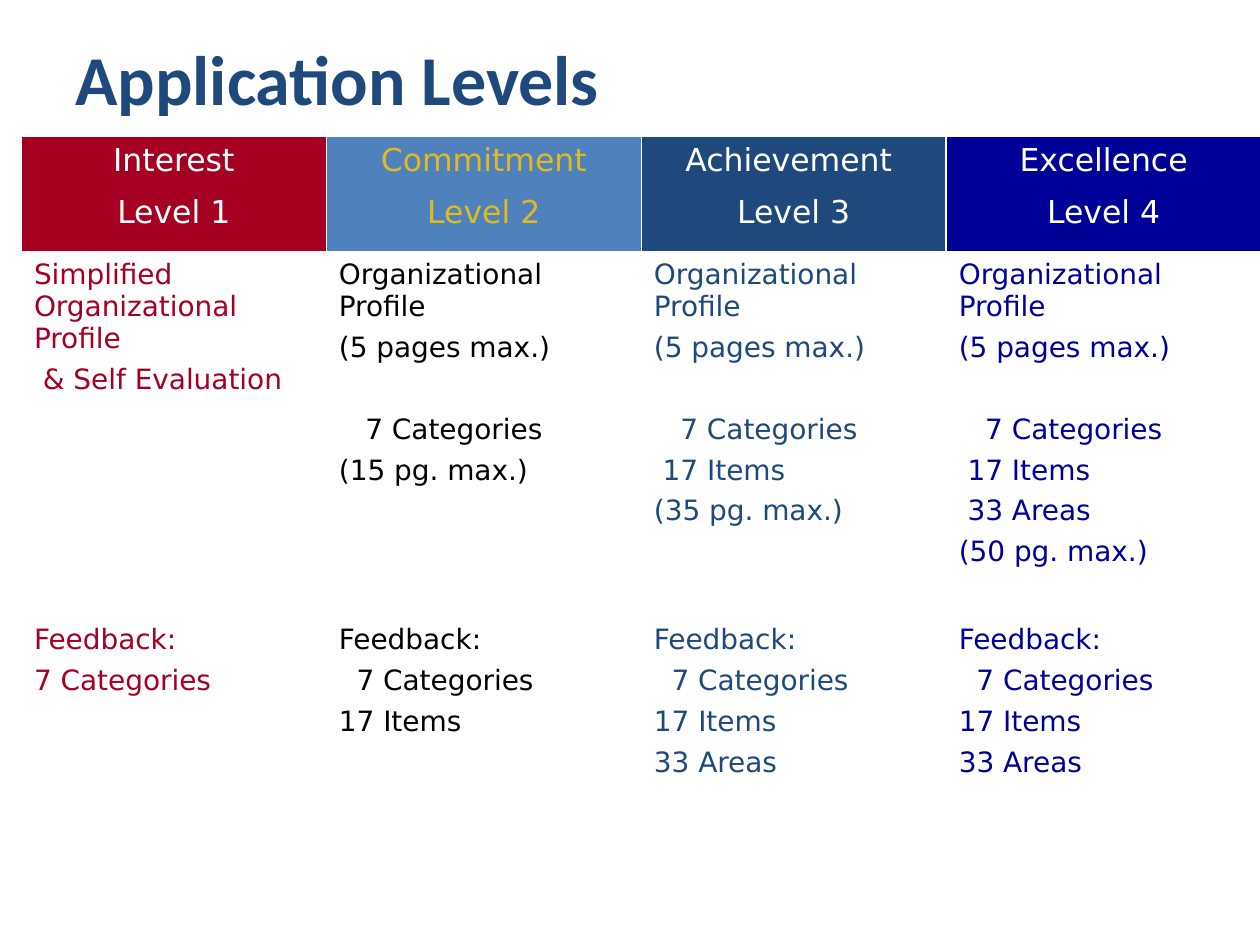
from lxml import etree
from pptx import Presentation, util as u
from pptx.dml.color import RGBColor
from pptx.enum import text as t
from pptx.oxml.ns import qn

theme = dict(
    title=dict(name="Calibri", size=u.Pt(40), bold=True),
    head=dict(name="DejaVu Sans", size=u.Pt(18), bold=False),
    body=dict(name="DejaVu Sans", size=u.Pt(16), bold=False),
    navy="1F497D", red="A50021", blue="4F81BD", deep="000099",
    gold="E0BB1E", white="FFFFFF", black="000000",
    space=0.07,
)


def style(par, kind, hue):
    for key, val in theme[kind].items():
        setattr(par.font, key, val)
    par.font.color.rgb = RGBColor.from_string(theme[hue])


def write(cell, lines, kind, hue, align, gap):
    frame = cell.text_frame
    for i, (pad, line) in enumerate(lines):
        par = frame.add_paragraph() if i else frame.paragraphs[0]
        par.text = line
        par.alignment = align
        style(par, kind, hue)
        prop = par._p.get_or_add_pPr()
        prop.set("marL", str(u.Inches(pad * theme["space"])))
        prop.set("indent", "0")
        space = etree.Element(qn("a:spcBef"))
        etree.SubElement(space, qn("a:spcPct")).set("val", str(gap * 1000))
        prop.insert(0, space)


prs = Presentation()
prs.slide_width, prs.slide_height = u.Inches(10), u.Inches(7.5)
slide = prs.slides.add_slide(prs.slide_layouts[6])

title = slide.shapes.add_textbox(u.Inches(0.5), u.Inches(0.23), u.Inches(7.7), u.Inches(0.77))
frame = title.text_frame
frame.word_wrap = True
frame.vertical_anchor = t.MSO_ANCHOR.MIDDLE
frame.text = "Application Levels"
style(frame.paragraphs[0], "title", "navy")

levels = [
    ("Interest", "red", "white", "red"),
    ("Commitment", "blue", "gold", "black"),
    ("Achievement ", "navy", "white", "navy"),
    ("Excellence", "deep", "white", "deep"),
]
prof = [(0, "Organizational Profile"), (0, "(5 pages max.)")]
cats, items, areas = (3, "7 Categories"), (1, "17 Items"), (1, "33 Areas")
back = [(0, "Feedback:"), (2, "7 Categories"), (0, "17 Items"), (0, "33 Areas")]
body = [
    [[(0, "Simplified Organizational Profile"), (1, "& Self Evaluation")], prof, prof, prof],
    [
        [(0, "")],
        [cats, (0, "(15 pg. max.)")],
        [cats, items, (0, "(35 pg. max.)")],
        [cats, items, areas, (0, "(50 pg. max.)")],
    ],
    [[(0, "Feedback:"), (0, "7 Categories")], back[:3], back, back],
]
wide = [2.42, 2.5, 2.42, 2.5]
high = [0.92, 1.17, 1.67, 1.5]

grid = slide.shapes.add_table(
    len(high), len(wide), u.Inches(0.17), u.Inches(1.08),
    u.Inches(sum(wide)), u.Inches(sum(high)),
).table
grid.first_row = grid.horz_banding = False
for col, size in zip(grid.columns, wide):
    col.width = u.Inches(size)
for row, size in zip(grid.rows, high):
    row.height = u.Inches(size)

for c, (name, fill, ink, hue) in enumerate(levels):
    top = grid.cell(0, c)
    write(top, [(0, name), (0, f"Level {c + 1}")], "head", ink, t.PP_ALIGN.CENTER, 50)
    top.fill.solid()
    top.fill.fore_color.rgb = RGBColor.from_string(theme[fill])
    for r, row in enumerate(body, 1):
        cell = grid.cell(r, c)
        write(cell, row[c], "body", hue, t.PP_ALIGN.LEFT, 30)
        cell.fill.background()

for cell in grid.iter_cells():
    prop = cell._tc.get_or_add_tcPr()
    for i, side in enumerate(("lnL", "lnR", "lnT", "lnB")):
        line = etree.Element(qn("a:" + side), w=str(u.Pt(1)))
        paint = etree.SubElement(line, qn("a:solidFill"))
        etree.SubElement(paint, qn("a:srgbClr")).set("val", theme["white"])
        prop.insert(i, line)

prs.save("out.pptx")
